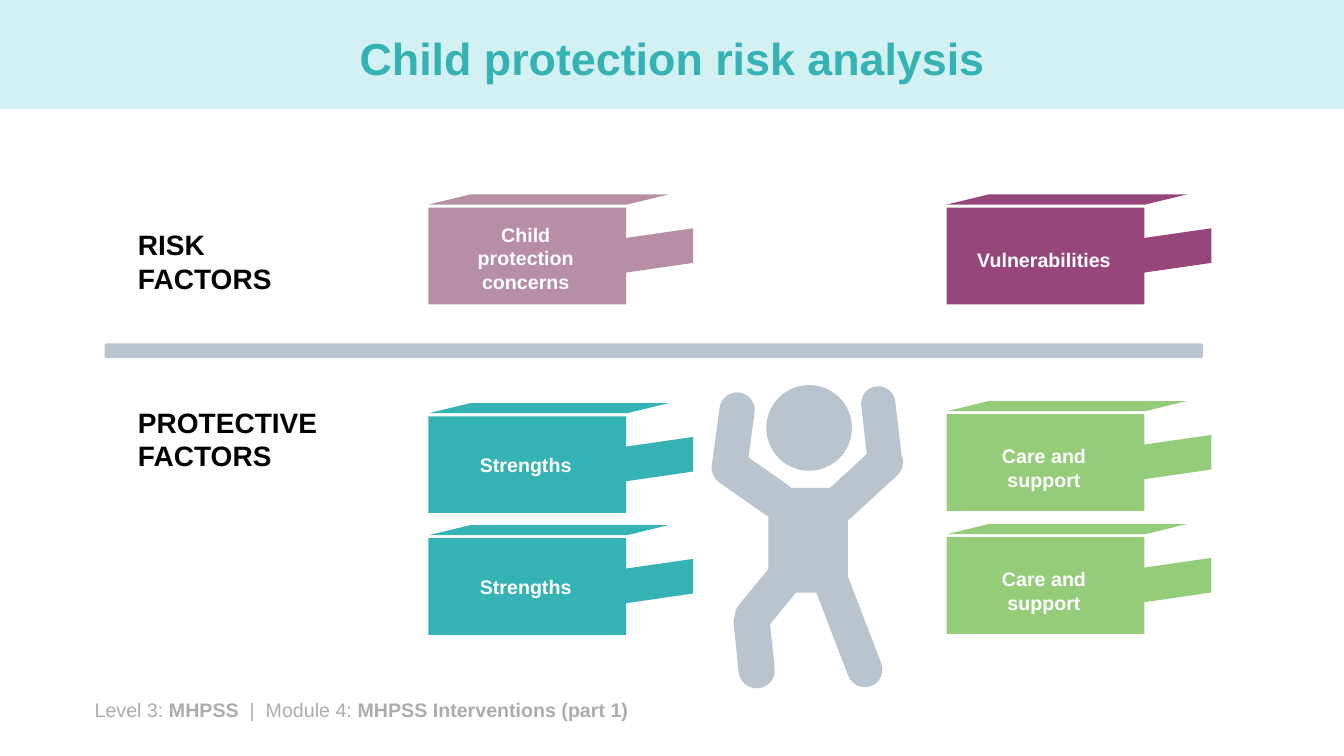
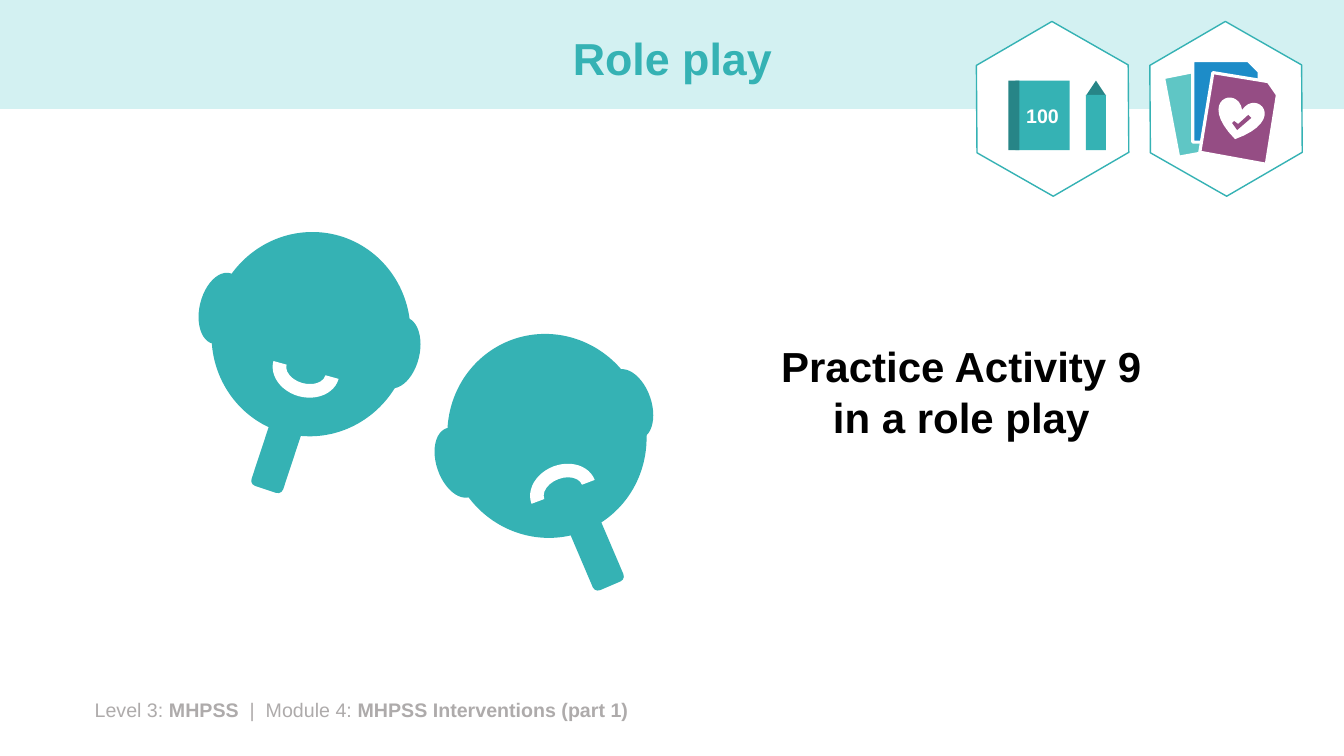
from dataclasses import dataclass

from pptx import Presentation
from pptx.dml.color import RGBColor
from pptx.enum.shapes import MSO_SHAPE as Preset
from pptx.enum.text import MSO_ANCHOR as Anchor, MSO_AUTO_SIZE as AutoSize, PP_ALIGN as Align
from pptx.util import Inches, Pt


@dataclass(frozen=True)
class Theme:
    font: str = "Arial"
    teal: str = "35B2B4"
    dark_teal: str = "278587"
    pale_teal: str = "D3F1F2"
    soft_teal: str = "5FC6C5"
    green: str = "95CC79"
    mauve: str = "B78EA3"
    plum: str = "97467C"
    purple: str = "954D84"
    blue: str = "1D8CC8"
    steel: str = "B9C4CE"
    grey: str = "AEABAB"
    white: str = "FFFFFF"
    black: str = "000000"
    title_size: int = 32
    activity_size: int = 30
    heading_size: int = 20
    small_size: int = 14


THEME = Theme()

SLIDE_SIZE = (13.33, 7.5)
BAND = (0, 0, 13.33, 1.08)
TITLE_FRAME = (0.92, 0.13, 11.5, 0.95)
FOOTER_FRAME = (0.84, 6.87, 11.35, 0.34)
FOOTER = [
    ("Level 3: ", False),
    ("MHPSS", True),
    ("  |  Module 4: ", False),
    ("MHPSS Interventions (part 1)", True),
]

RISK_TITLE = "Child protection risk analysis"
FACTOR_HEADINGS = [("RISK FACTORS", 2.21), ("PROTECTIVE FACTORS", 3.97)]
DIVIDER = (1.03, 3.4, 10.91, 0.16)
LEFT_COLUMN, RIGHT_COLUMN = 4.25, 9.39
BLOCKS = [
    ("Child protection concerns", LEFT_COLUMN, 2.06, THEME.mauve, 0.02),
    ("Vulnerabilities", RIGHT_COLUMN, 2.06, THEME.plum, 0.04),
    ("Strengths", LEFT_COLUMN, 4.13, THEME.teal, 0),
    ("Strengths", LEFT_COLUMN, 5.34, THEME.teal, 0),
    ("Care and support", RIGHT_COLUMN, 4.11, THEME.green, 0.05),
    ("Care and support", RIGHT_COLUMN, 5.33, THEME.green, 0.05),
]
HEAD = (7.6, 3.82, 0.85, 0.85)
TORSO = (7.62, 4.84, 0.79, 1.04)
LIMBS = [
    ((7.49, 5.37, 0.36, 1), 39.3),
    ((8.23, 5.54, 0.35, 1.31), 159),
    ((7.3, 5.99, 0.36, 0.84), 174),
    ((8.57, 3.83, 0.34, 0.85), 353.4),
    ((8.34, 4.29, 0.36, 1.06), 47.4),
    ((7.29, 4.33, 0.37, 0.94), 125),
    ((7.1, 3.89, 0.35, 0.89), 7.7),
]

ROLE_TITLE = "Role play"
ACTIVITY = "Practice Activity 9 in a role play"
ACTIVITY_FRAME = (7.63, 3.33, 3.81, 1.11)
MASKS = [
    {
        "handle": (2.62, 3.92, 18.3),
        "face": (2.1, 2.3),
        "ears": [(1.98, 2.7), (3.73, 3.14)],
        "tilt": 13.8,
        "mouth": (2.7, 3.4, 195.3),
    },
    {
        "handle": (5.7, 4.89, 336.9),
        "face": (4.44, 3.31),
        "ears": [(4.33, 4.23), (6.03, 3.65)],
        "tilt": 341,
        "mouth": (5.25, 4.61, 339.3),
    },
]
HEXAGON_LEFTS = (9.57, 11.29)
NOTEBOOK = (10.07, 0.8, 0.54, 0.69)
NOTEBOOK_LABEL = "100"
STATIONERY = [
    (Preset.RECTANGLE, (10, 0.8, 0.11, 0.69), THEME.dark_teal),
    (Preset.ISOSCELES_TRIANGLE, (10.77, 0.8, 0.2, 0.15), THEME.dark_teal),
    (Preset.RECTANGLE, (10.77, 0.94, 0.2, 0.55), THEME.teal),
]
CARDS = [
    (THEME.soft_teal, [(11.54, 0.77), (12.09, 0.66), (12.22, 0.75), (12.35, 1.44), (11.69, 1.56)]),
    (THEME.blue, [(11.83, 0.6), (12.38, 0.6), (12.49, 0.71), (12.49, 1.41), (11.83, 1.41)]),
    (THEME.purple, [(12.03, 0.72), (12.58, 0.81), (12.67, 0.94), (12.56, 1.63), (11.9, 1.51)]),
]
HEART_CURVES = [
    [(12.32, 1.09), (12.46, 0.88), (12.78, 1.19), (12.25, 1.38)],
    [(12.25, 1.38), (11.86, 0.99), (12.28, 0.84), (12.32, 1.09)],
]
TICK = [(12.22, 1.22), (12.24, 1.2), (12.28, 1.23), (12.38, 1.14), (12.41, 1.17), (12.27, 1.29)]


def inches(values):
    return [Inches(value) for value in values]


def rgb(colour):
    return RGBColor.from_string(colour)


def paint(shape, fill, line=None, width=1):
    shape.shadow.inherit = False
    shape.fill.solid()
    shape.fill.fore_color.rgb = rgb(fill)
    if line:
        shape.line.color.rgb = rgb(line)
        shape.line.width = Pt(width)
    else:
        shape.line.fill.background()
    return shape


def add_preset(shapes, preset, frame, fill, rotation=0, adjust=(), line=None):
    shape = paint(shapes.add_shape(preset, *inches(frame)), fill, line)
    shape.rotation = rotation
    for index, value in enumerate(adjust):
        shape.adjustments[index] = value
    return shape


def add_outline(shapes, points, fill, line=None, width=1):
    start, *rest = [inches(point) for point in points]
    builder = shapes.build_freeform(*start)
    builder.add_line_segments(rest, close=True)
    return paint(builder.convert_to_shape(), fill, line, width)


def style_run(run, size, colour, bold=True):
    run.font.name = THEME.font
    run.font.size = Pt(size)
    run.font.bold = bold
    run.font.color.rgb = rgb(colour)


def write(shape, text, size, colour, align=Align.CENTER):
    frame = shape.text_frame
    frame.text = text
    frame.word_wrap = True
    paragraph = frame.paragraphs[0]
    paragraph.alignment = align
    style_run(paragraph.runs[0], size, colour)
    return frame


def curve_points(curve, steps=16):
    weights = (1, 3, 3, 1)
    for step in range(steps):
        t = step / steps
        yield tuple(
            sum(w * (1 - t) ** (3 - k) * t**k * point[axis] for k, (w, point) in enumerate(zip(weights, curve)))
            for axis in (0, 1)
        )


def furnish_layout(layout, slide):
    band = add_preset(slide.shapes, Preset.RECTANGLE, BAND, THEME.pale_teal)
    footer = slide.shapes.add_textbox(*inches(FOOTER_FRAME))
    footer.text_frame.word_wrap = True
    for text, bold in FOOTER:
        run = footer.text_frame.paragraphs[0].add_run()
        run.text = text
        style_run(run, THEME.small_size, THEME.grey, bold)
    tree = layout.element.cSld.spTree
    tree.insert(2, band.element)
    tree.insert(3, footer.element)


def add_title(slide, text):
    title = slide.shapes.title
    title.left, title.top, title.width, title.height = inches(TITLE_FRAME)
    frame = write(title, text, THEME.title_size, THEME.teal)
    frame.vertical_anchor = Anchor.MIDDLE
    frame.auto_size = AutoSize.NONE
    frame.paragraphs[0].line_spacing = 0.9


def add_block(slide, label, left, top, colour, drop):
    shapes = slide.shapes.add_group_shape().shapes
    front = add_preset(shapes, Preset.RECTANGLE, (left, top, 1.96, 0.96), colour)
    side = add_preset(shapes, Preset.PARALLELOGRAM, (left + 2.07, top + 0.09, 0.44, 0.67), colour, 270, [0.22])
    side.element.spPr.xfrm.set("flipH", "1")
    add_preset(shapes, Preset.PARALLELOGRAM, (left, top - 0.13, 2.38, 0.1), colour, adjust=[4.13])
    frame = write(front, label, THEME.small_size, THEME.white)
    frame.vertical_anchor = Anchor.MIDDLE
    frame.margin_left, frame.margin_right = Inches(0.25), Inches(0.28)
    frame.margin_top = Inches(0.05 + 2 * drop)


def add_figure(slide):
    shapes = slide.shapes.add_group_shape().shapes
    add_preset(shapes, Preset.OVAL, HEAD, THEME.steel)
    add_preset(shapes, Preset.RECTANGLE, TORSO, THEME.steel)
    for frame, rotation in LIMBS:
        add_preset(shapes, Preset.ROUNDED_RECTANGLE, frame, THEME.steel, rotation, [0.5])


def add_mask(slide, handle, face, ears, tilt, mouth):
    shapes = slide.shapes.add_group_shape().shapes
    *corner, rotation = handle
    add_preset(shapes, Preset.ROUNDED_RECTANGLE, (*corner, 0.33, 0.96), THEME.teal, rotation)
    add_preset(shapes, Preset.OVAL, (*face, 1.97, 2.03), THEME.teal, tilt)
    for ear in ears:
        add_preset(shapes, Preset.OVAL, (*ear, 0.43, 0.72), THEME.teal, tilt)
    *corner, rotation = mouth
    add_preset(shapes, Preset.BLOCK_ARC, (*corner, 0.67, 0.54), THEME.white, rotation, [108, 0, 0.25])


def add_badges(slide):
    for left in HEXAGON_LEFTS:
        add_preset(
            slide.shapes, Preset.HEXAGON, (left, 0.33, 1.74, 1.5), THEME.white, 29.7, [0.29, 1.155], THEME.teal
        )
    stationery = slide.shapes.add_group_shape().shapes
    notebook = add_preset(stationery, Preset.RECTANGLE, NOTEBOOK, THEME.teal)
    write(notebook, NOTEBOOK_LABEL, THEME.small_size, THEME.white).vertical_anchor = Anchor.MIDDLE
    for preset, frame, colour in STATIONERY:
        add_preset(stationery, preset, frame, colour)
    cards = slide.shapes.add_group_shape().shapes
    for colour, points in CARDS:
        add_outline(cards, points, colour, THEME.white, 2.25)
    heart = [point for curve in HEART_CURVES for point in curve_points(curve)]
    add_outline(cards, heart, THEME.white)
    add_outline(cards, TICK, THEME.purple)


def build_risk_slide(slide):
    add_title(slide, RISK_TITLE)
    for heading, top in FACTOR_HEADINGS:
        box = slide.shapes.add_textbox(*inches((1.27, top, 2.15, 0.77)))
        write(box, heading, THEME.heading_size, THEME.black, Align.LEFT)
    add_preset(slide.shapes, Preset.ROUNDED_RECTANGLE, DIVIDER, THEME.steel, line=THEME.white)
    add_figure(slide)
    for block in BLOCKS:
        add_block(slide, *block)


def build_role_slide(slide):
    add_title(slide, ROLE_TITLE)
    for mask in MASKS:
        add_mask(slide, **mask)
    box = slide.shapes.add_textbox(*inches(ACTIVITY_FRAME))
    write(box, ACTIVITY, THEME.activity_size, THEME.black)
    add_badges(slide)


def main():
    deck = Presentation()
    deck.slide_width, deck.slide_height = inches(SLIDE_SIZE)
    layout = deck.slide_layouts.get_by_name("Title Only")
    risk_slide, role_slide = (deck.slides.add_slide(layout) for _ in range(2))
    furnish_layout(layout, risk_slide)
    build_risk_slide(risk_slide)
    build_role_slide(role_slide)
    deck.save("out.pptx")


if __name__ == "__main__":
    main()
